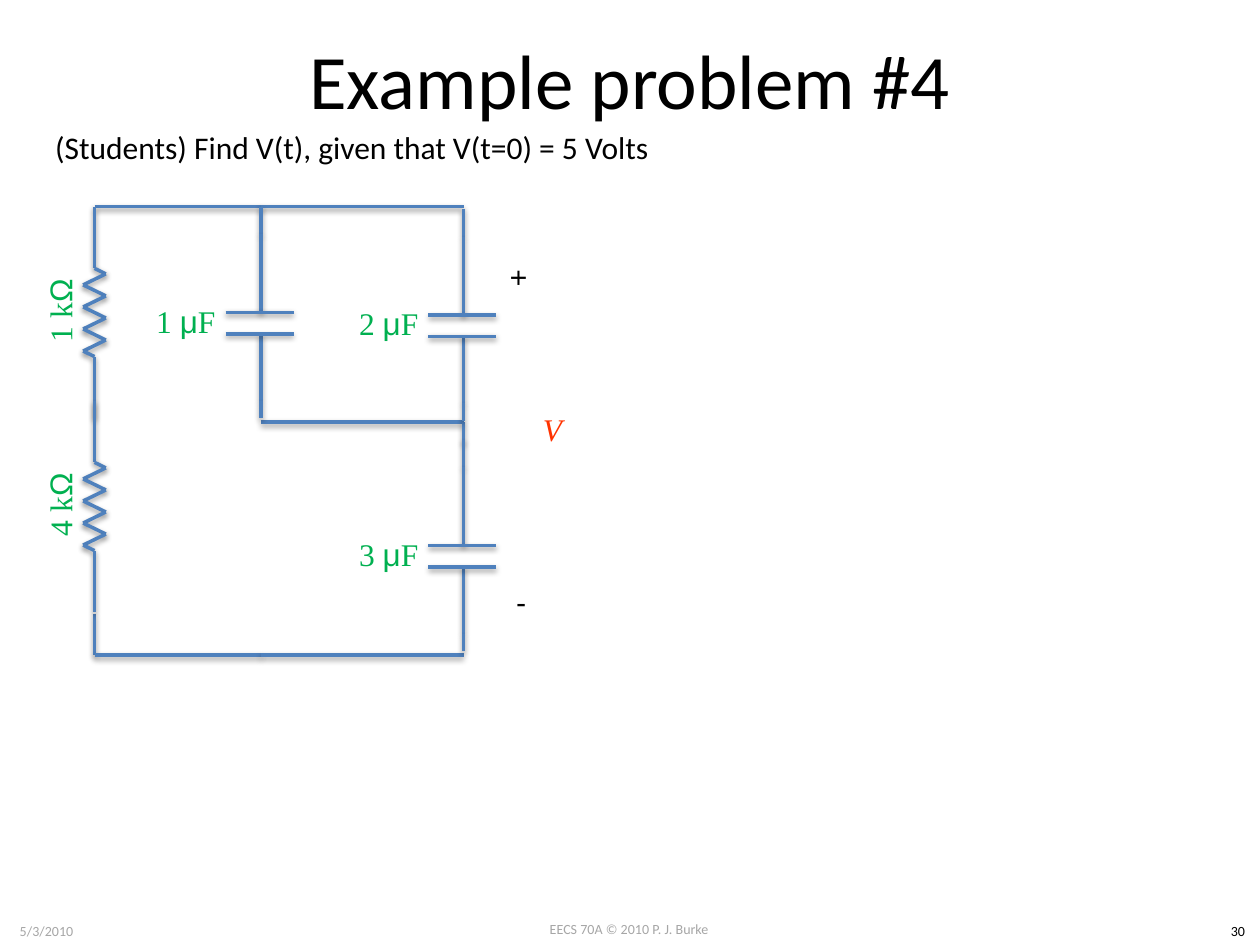
from itertools import pairwise

from lxml import etree
from pptx import Presentation
from pptx.dml.color import RGBColor
from pptx.enum.shapes import MSO_CONNECTOR
from pptx.enum.text import MSO_ANCHOR, PP_ALIGN
from pptx.oxml import parse_xml
from pptx.util import Inches, Pt

STRAIGHT = MSO_CONNECTOR.STRAIGHT
TOP, MIDDLE = MSO_ANCHOR.TOP, MSO_ANCHOR.MIDDLE
LEFT, CENTER = PP_ALIGN.LEFT, PP_ALIGN.CENTER

COLORS = {
    "wire": "4F81BD",
    "value": "00B050",
    "voltage": "FF3300",
    "footer": "A6A6A6",
    "text": "000000",
}
BODY, SERIF, GREEK = "Calibri", "Times New Roman", "Arial"
WIRE_SHADOW = (
    '<a:effectLst xmlns:a="http://schemas.openxmlformats.org/drawingml/2006/main">'
    '<a:outerShdw blurRad="40000" dist="20000" dir="5400000" rotWithShape="0">'
    '<a:srgbClr val="000000"><a:alpha val="38000"/></a:srgbClr>'
    "</a:outerShdw></a:effectLst>"
)

LEFT_X, MIDDLE_X, RIGHT_X = 0.75, 2.07, 3.68
TOP_Y, NODE_Y, BOTTOM_Y = 1.64, 3.35, 5.2
LABEL_SIZE = (1.19, 0.73)


def add_text(slide, box, runs, color="text", size=18, align=LEFT, anchor=TOP,
             wrap=True, rotation=0, italic=False):
    """Write (text, font name) runs as one paragraph in a text box."""
    holder = slide.shapes.add_textbox(*map(Inches, box))
    holder.rotation = rotation
    frame = holder.text_frame
    frame.word_wrap = wrap
    frame.vertical_anchor = anchor
    paragraph = frame.paragraphs[0]
    paragraph.alignment = align
    for text, font_name in runs:
        run = paragraph.add_run()
        run.text = text
        style = {"name": font_name, "size": Pt(size), "italic": italic}
        for attribute, value in style.items():
            setattr(run.font, attribute, value)
        run.font.color.rgb = RGBColor.from_string(COLORS[color])


def add_wire(slide, *points):
    """Join successive points with straight segments."""
    for start, end in pairwise(points):
        segment = slide.shapes.add_connector(
            STRAIGHT, *map(Inches, (*start, *end)))
        segment.line.color.rgb = RGBColor.from_string(COLORS["wire"])
        segment.line.width = Pt(2)
        segment._element.spPr.append(parse_xml(WIRE_SHADOW))


def add_value(slide, left, top, runs, rotation=0):
    add_text(slide, (left, top, *LABEL_SIZE), runs, "value",
             align=CENTER, anchor=MIDDLE, rotation=rotation)


def add_resistor(slide, top, kilohms):
    """Draw a vertical resistor with both leads on the left branch."""
    lead, body, half_width, teeth = 0.49, 0.7, 0.09, 8
    start, end = top + lead, top + lead + body
    pitch = body / teeth
    zigzag = [
        (LEFT_X + half_width * (-1) ** i, start + pitch * (i + 0.5))
        for i in range(teeth)
    ]
    add_wire(slide, (LEFT_X, top), (LEFT_X, start), *zigzag,
             (LEFT_X, end), (LEFT_X, end + lead))
    add_value(slide, -0.12, top + 0.46,
              [(f"{kilohms} k", SERIF), ("Ω", GREEK)], rotation=270)


def add_capacitor(slide, x, top, microfarads):
    """Draw a vertical capacitor with both leads and its value to the left."""
    upper, lower = top + 0.84, top + 1.01
    add_wire(slide, (x, top), (x, top + 0.22), (x, upper))
    add_wire(slide, (x, lower), (x, top + 1.54), (x, top + 1.68))
    for plate in (upper, lower):
        add_wire(slide, (x - 0.28, plate), (x + 0.26, plate))
    add_value(slide, x - LABEL_SIZE[0], top + 0.54,
              [(f"{microfarads} ", SERIF), ("μ", GREEK), ("F", SERIF)])


def add_circuit(slide):
    add_wire(slide, (LEFT_X, TOP_Y), (MIDDLE_X, TOP_Y), (RIGHT_X, TOP_Y))
    add_wire(slide, (LEFT_X, 4.87), (LEFT_X, BOTTOM_Y),
             (MIDDLE_X, BOTTOM_Y), (RIGHT_X, BOTTOM_Y))
    add_wire(slide, (MIDDLE_X, NODE_Y), (RIGHT_X, NODE_Y), (RIGHT_X, 3.52))
    for top, kilohms in ((TOP_Y, 1), (3.18, 4)):
        add_resistor(slide, top, kilohms)
    for x, top, microfarads in (
            (MIDDLE_X, TOP_Y, 1), (RIGHT_X, 1.66, 2), (RIGHT_X, 3.49, 3)):
        add_capacitor(slide, x, top, microfarads)
    add_text(slide, (3.97, 2.01, 0.33, 0.4), [("+", BODY)],
             wrap=False, rotation=90)
    add_text(slide, (4, 3.1, 0.77, 0.61), [("V", SERIF)], "voltage",
             align=CENTER, anchor=MIDDLE, italic=True)
    add_text(slide, (4, 4.58, 0.28, 0.4), [("-", BODY)], wrap=False)


def add_footer(slide):
    for left, top, width, text, color in (
            (3.83, 7.26, 2.33, "EECS 70A © 2010 P. J. Burke", "footer"),
            (0, 7.27, 0.74, "5/3/2010", "footer"),
            (9.65, 7.27, 0.35, "30", "text")):
        add_text(slide, (left, top, width, 0.24), [(text, BODY)], color,
                 size=8, align=CENTER)


def main():
    deck = Presentation()
    deck.slide_width, deck.slide_height = Inches(10), Inches(7.5)
    slide = deck.slides.add_slide(deck.slide_layouts[6])
    add_footer(slide)
    add_text(slide, (0.5, 0, 9, 1.25), [("Example problem #4", BODY)],
             size=44, align=CENTER, anchor=MIDDLE)
    add_text(slide, (0.34, 0.97, 5, 0.4),
             [("(Students) Find V(t), given that V(t=0) = 5 Volts", BODY)],
             wrap=False)
    add_circuit(slide)
    deck.save("out.pptx")


if __name__ == "__main__":
    main()
